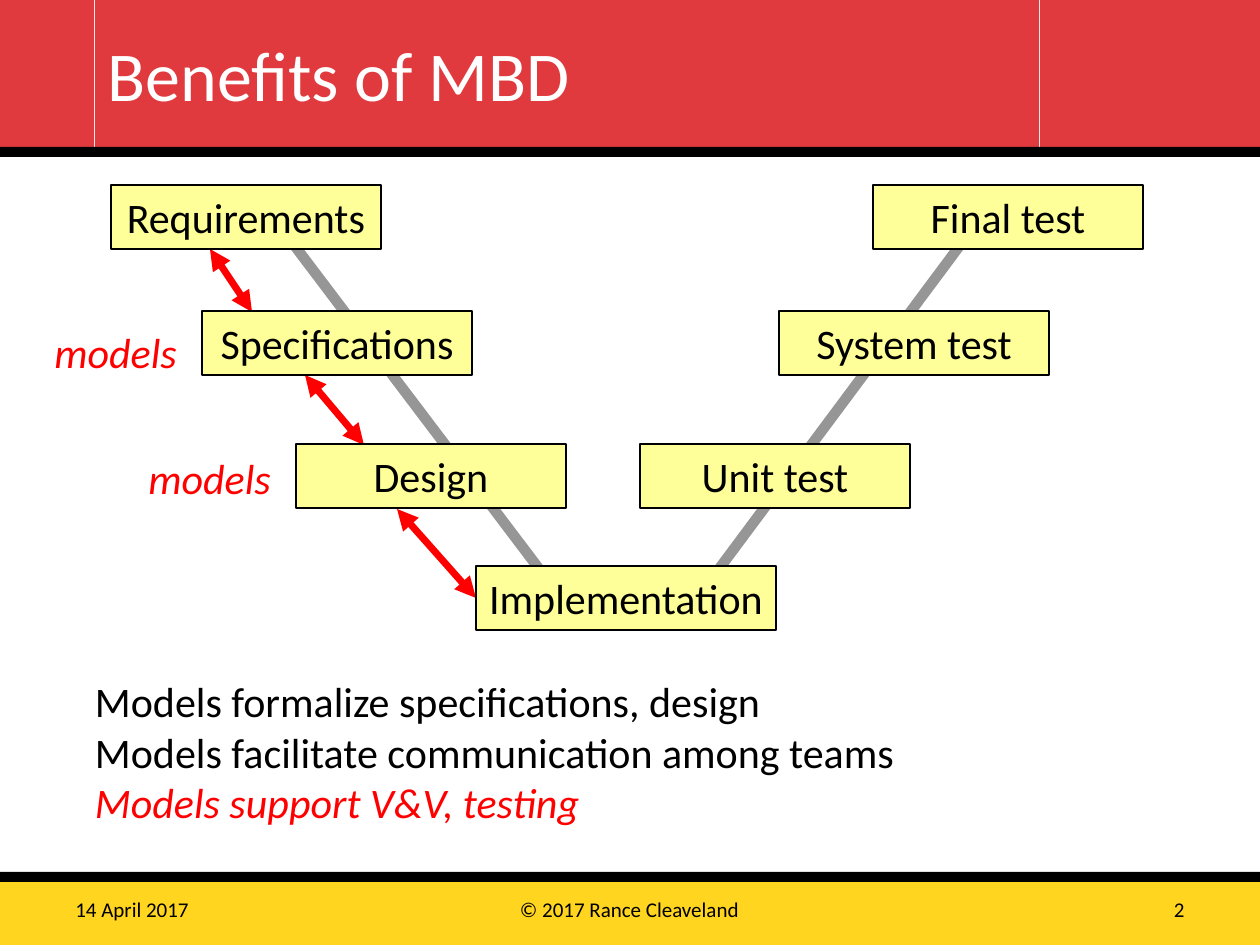
from pptx import Presentation
from pptx.dml.color import RGBColor
from pptx.enum.shapes import MSO_CONNECTOR as Connector, MSO_SHAPE as Shape
from pptx.enum.text import MSO_ANCHOR as Anchor, PP_ALIGN as Align
from pptx.oxml.ns import qn
from pptx.util import Emu, Pt
from lxml.etree import SubElement

SCALE = 914400 / 126


def px(*lengths):
    return [Emu(round(length * SCALE)) for length in lengths]


def write(shape, *lines, size=24, colors=("000000",), italics=(False,),
          align=Align.LEFT, anchor=Anchor.MIDDLE, wrap=True):
    frame = shape.text_frame
    frame.word_wrap = wrap
    frame.vertical_anchor = anchor
    frame.text = "\n".join(lines)
    for paragraph, color, italic in zip(frame.paragraphs, colors, italics):
        paragraph.alignment = align
        font = paragraph.font
        font.name, font.size, font.italic = "Calibri", Pt(size), italic
        font.color.rgb = RGBColor.from_string(color)


presentation = Presentation()
presentation.slide_width, presentation.slide_height = px(1260, 945)
slide = presentation.slides.add_slide(presentation.slide_layouts[5])
shapes = slide.shapes

for left, top, width, height, color in [
    (1040, 0, 220, 147, "E03A3E"),
    (0, 0, 94, 147, "E03A3E"),
    (0, 882, 1260, 63, "FFD520"),
    (0, 147, 1260, 10, "000000"),
    (0, 872, 1260, 10, "000000"),
]:
    band = shapes.add_shape(Shape.RECTANGLE, *px(left, top, width, height))
    band.shadow.inherit = False
    band.fill.solid()
    band.fill.fore_color.rgb = RGBColor.from_string(color)
    band.line.fill.background()

title = shapes.title
title.left, title.top, title.width, title.height = px(95, 0, 944, 147)
title.fill.solid()
title.fill.fore_color.rgb = RGBColor.from_string("E03A3E")
write(title, "Benefits of MBD", size=40, colors=["FFFFFF"])

connectors = []
for x1, y1, x2, y2, color, weight in [
    (678, 624, 990, 205, "969696", 6),
    (260, 200, 577, 619, "969696", 6),
    (210, 249, 252, 312, "FF0000", 4),
    (305, 375, 364, 445, "FF0000", 4),
    (397, 509, 476, 598, "FF0000", 4),
]:
    connector = shapes.add_connector(Connector.STRAIGHT, *px(x1, y1, x2, y2))
    connector.line.color.rgb = RGBColor.from_string(color)
    connector.line.width = Pt(weight)
    if color == "FF0000":
        line = connector.line._get_or_add_ln()
        for end in ("a:headEnd", "a:tailEnd"):
            SubElement(line, qn(end), type="triangle")
    SubElement(connector._element.spPr, qn("a:effectLst"))
    connectors.append(connector)

stages = {}
for name, left, top, width in [
    ("Requirements", 111, 185, 270),
    ("Specifications", 202, 311, 270),
    ("Design", 296, 444, 270),
    ("Implementation", 476, 566, 300),
    ("Unit test", 640, 444, 270),
    ("System test", 779, 311, 270),
    ("Final test", 873, 185, 270),
]:
    stage = shapes.add_shape(Shape.RECTANGLE, *px(left, top, width, 64))
    stage.shadow.inherit = False
    stage.fill.solid()
    stage.fill.fore_color.rgb = RGBColor.from_string("FFFF99")
    stage.line.color.rgb = RGBColor.from_string("000000")
    stage.line.width = Pt(0.75)
    write(stage, name, align=Align.CENTER, wrap=False)
    stages[name] = stage

connectors[-1].end_connect(stages["Implementation"], 1)

for left, top in [(42, 320), (136, 446)]:
    label = shapes.add_textbox(*px(left, top, 150, 63))
    write(label, "models", colors=["FF0000"], italics=[True],
          anchor=Anchor.BOTTOM, wrap=False)

benefits = shapes.add_textbox(*px(73, 661, 1134, 174))
benefits.text_frame.margin_left, benefits.text_frame.margin_top = px(22, 15)
write(benefits,
      "Models formalize specifications, design",
      "Models facilitate communication among teams",
      "Models support V&V, testing",
      colors=["000000", "000000", "FF0000"],
      italics=[False, False, True], anchor=Anchor.TOP)

for text, left, width, align in [
    ("14 April 2017", 63, 189, Align.LEFT),
    ("© 2017 Rance Cleaveland", 283, 693, Align.CENTER),
    ("2", 1008, 189, Align.RIGHT),
]:
    footer = shapes.add_textbox(*px(left, 892, width, 34))
    write(footer, text, size=12, align=align)

presentation.save("out.pptx")
